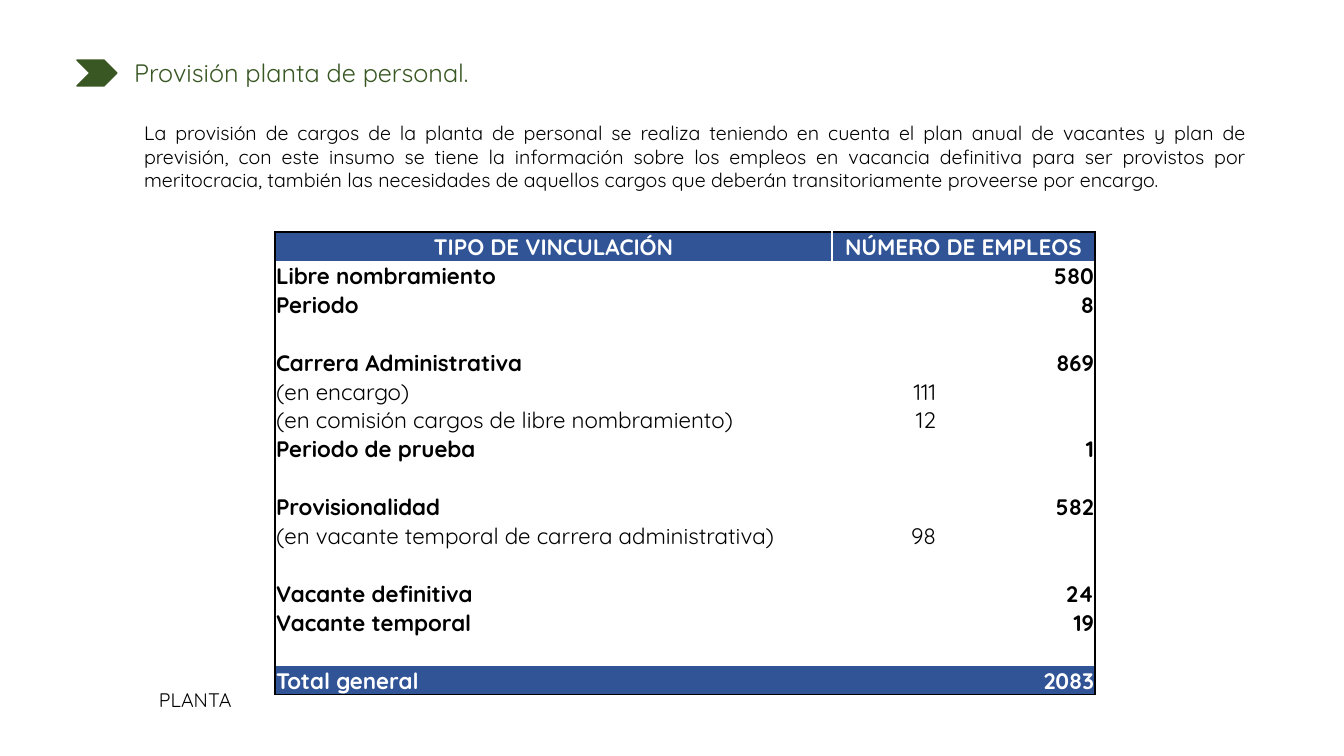
from dataclasses import dataclass

from lxml import etree
from pptx import Presentation
from pptx import util as u
from pptx.dml.color import RGBColor
from pptx.enum import shapes, text
from pptx.oxml import ns

SCALE = 914400 / 100.8
ALIGN = text.PP_ALIGN


def px(n):
    return u.Emu(round(n * SCALE))


@dataclass(frozen=True)
class Theme:
    font: str = "Quicksand"
    green: str = "385723"
    blue: str = "305496"
    black: str = "000000"
    white: str = "FFFFFF"
    title: int = 18
    body: int = 14
    cell: int = 16


class Deck:
    def __init__(self, theme):
        self.t = theme
        self.prs = Presentation()
        self.prs.slide_width, self.prs.slide_height = px(1344), px(756)
        self.s = self.prs.slides.add_slide(self.prs.slide_layouts[1])

    def style(self, p, size, color, align=ALIGN.LEFT, bold=False):
        p.alignment = align
        for r in p.runs:
            r.font.name = self.t.font
            r.font.size = u.Pt(size)
            r.font.bold = bold
            r.font.color.rgb = RGBColor.from_string(color)

    def place(self, sp, box):
        sp.left, sp.top, sp.width, sp.height = map(px, box)

    def set_text(self, sp, words, size, color, align):
        tf = sp.text_frame
        tf.text = words
        tf.word_wrap = True
        tf.auto_size = text.MSO_AUTO_SIZE.NONE
        tf.vertical_anchor = text.MSO_ANCHOR.TOP
        p = tf.paragraphs[0]
        p.line_spacing = 1.0
        p.space_before = u.Pt(0)
        self.style(p, size, color, align)
        return p

    def title(self, words, box):
        sp = self.s.shapes.title
        self.place(sp, box)
        self.set_text(sp, words, self.t.title, self.t.green, ALIGN.JUSTIFY)

    def body(self, words, box):
        sp = self.s.placeholders[1]
        self.place(sp, box)
        p = self.set_text(sp, words, self.t.body, self.t.black, ALIGN.JUSTIFY)
        pPr = p._p.get_or_add_pPr()
        pPr.set("marL", "0")
        pPr.set("indent", "0")
        etree.SubElement(pPr, ns.qn("a:buNone"))

    def label(self, words, box):
        sp = self.s.shapes.add_textbox(*map(px, box))
        self.set_text(sp, words, self.t.body, self.t.black, ALIGN.LEFT)

    def chevron(self, box):
        sp = self.s.shapes.add_shape(shapes.MSO_SHAPE.CHEVRON, *map(px, box))
        sp.shadow.inherit = False
        sp.fill.solid()
        sp.fill.fore_color.rgb = RGBColor.from_string(self.t.green)
        sp.line.color.rgb = RGBColor.from_string(self.t.green)
        sp.line.width = u.Pt(1)

    def borders(self, cell, colors):
        tcPr = cell._tc.get_or_add_tcPr()
        for side in "LRTB":
            ln = etree.SubElement(tcPr, ns.qn(f"a:ln{side}"), w=str(u.Pt(1)))
            if side in colors:
                fill = etree.SubElement(ln, ns.qn("a:solidFill"))
                etree.SubElement(fill, ns.qn("a:srgbClr"), val=colors[side])
            else:
                etree.SubElement(ln, ns.qn("a:noFill"))

    def cell(self, cell, words, colors, filled, bold, align):
        cell.text = words
        cell.margin_left = cell.margin_right = cell.margin_top = px(1)
        cell.margin_bottom = 0
        cell.vertical_anchor = text.MSO_ANCHOR.MIDDLE
        self.borders(cell, colors)
        if filled:
            cell.fill.solid()
            cell.fill.fore_color.rgb = RGBColor.from_string(self.t.blue)
        else:
            cell.fill.background()
        p = cell.text_frame.paragraphs[0]
        self.style(p, self.t.cell, self.t.white if filled else self.t.black, align, bold)
        if not words:
            end = etree.SubElement(p._p, ns.qn("a:endParaRPr"), sz=str(self.t.cell * 100))
            etree.SubElement(end, ns.qn("a:latin"), typeface=self.t.font)

    def table(self, rows, widths, box):
        last, end = len(rows) - 1, len(widths) - 1
        tbl = self.s.shapes.add_table(len(rows), len(widths), *map(px, box)).table
        tbl.first_row = tbl.horz_banding = False
        for col, width in zip(tbl.columns, widths):
            col.width = px(width)
        tbl.cell(0, 1).merge(tbl.cell(0, end))
        for i, row in enumerate(rows):
            header = i == 0
            for j, words in enumerate(row):
                colors = {}
                if j == 0:
                    colors["L"] = self.t.black
                if j == end or header and j == 1:
                    colors["R"] = self.t.black
                if header:
                    colors["T"] = self.t.black
                    if j < 2:
                        colors["RL"[j]] = self.t.white
                if i == last:
                    colors["B"] = self.t.black
                align = ALIGN.CENTER if header else ALIGN.RIGHT if j else ALIGN.LEFT
                bold = not row[0].startswith("(")
                self.cell(tbl.cell(i, j), words, colors, i in (0, last), bold, align)


ROWS = [
    ("TIPO DE VINCULACIÓN", "NÚMERO DE EMPLEOS", ""),
    ("Libre nombramiento", "", "580"),
    ("Periodo", "", "8"),
    ("", "", ""),
    ("Carrera Administrativa", "", "869"),
    ("(en encargo)", "111", ""),
    ("(en comisión cargos de libre nombramiento)", "12", ""),
    ("Periodo de prueba", "", "1"),
    ("", "", ""),
    ("Provisionalidad", "", "582"),
    ("(en vacante temporal de carrera administrativa)", "98", ""),
    ("", "", ""),
    ("Vacante definitiva", "", "24"),
    ("Vacante temporal", "", "19"),
    ("", "", ""),
    ("Total general", "", "2083"),
]


def main():
    deck = Deck(Theme())
    deck.chevron((77, 60, 40, 26))
    deck.title("Provisión planta de personal.", (124, 52, 1123, 62))
    deck.body(
        "La provisión de cargos de la planta de personal se realiza teniendo en cuenta "
        "el plan anual de vacantes y plan de previsión, con este insumo se tiene la "
        "información sobre los empleos en vacancia definitiva para ser provistos por "
        "meritocracia, también las necesidades de aquellos cargos que deberán "
        "transitoriamente proveerse por encargo.",
        (134, 116, 1123, 84),
    )
    deck.table(ROWS, (557, 105, 158), (275, 232, 820, 457))
    deck.label("PLANTA", (149, 683, 322, 34))
    deck.prs.save("out.pptx")


if __name__ == "__main__":
    main()
